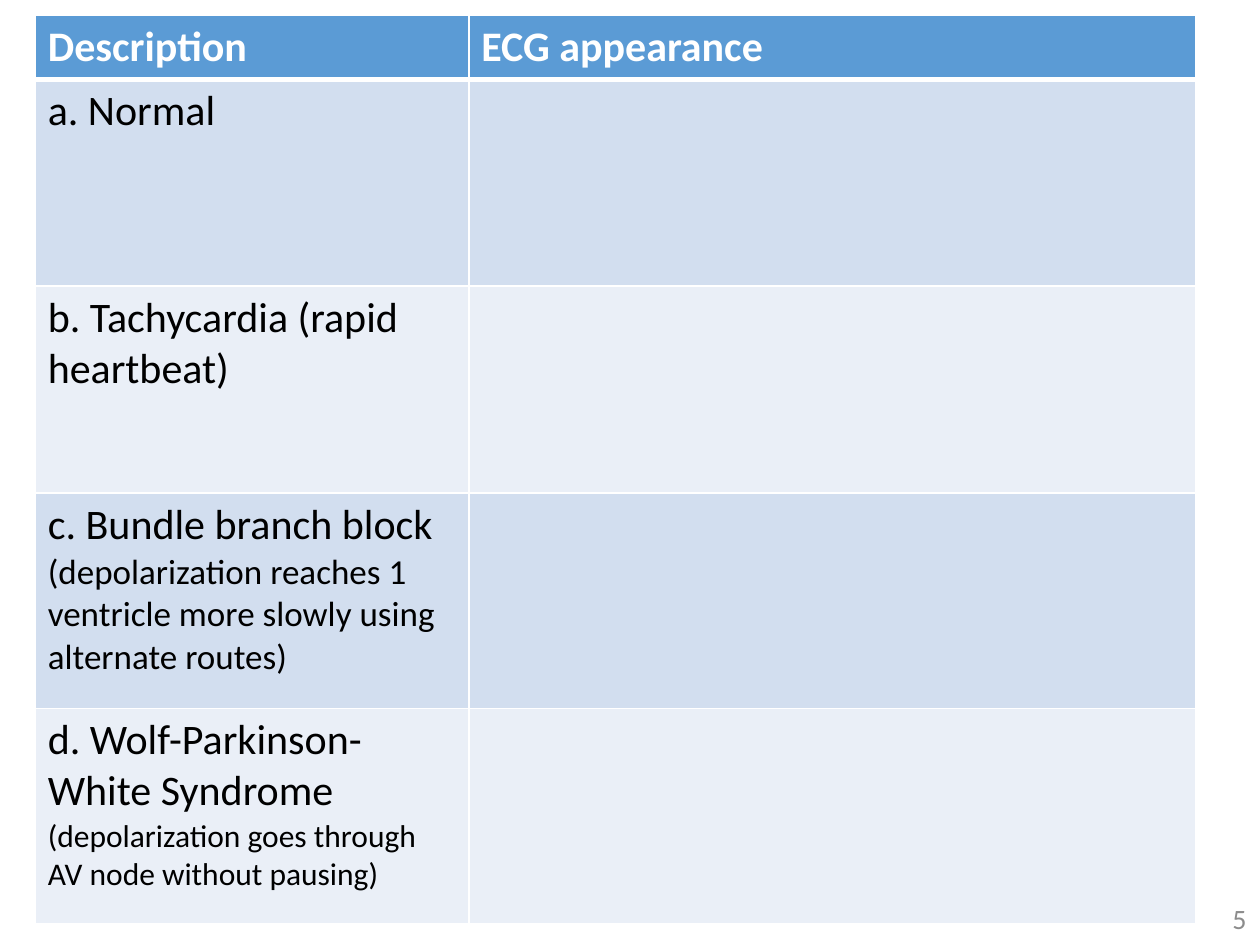
from dataclasses import dataclass

from lxml import etree
from pptx import Presentation
from pptx import util as u
from pptx.dml.color import RGBColor
from pptx.enum import text
from pptx.oxml import ns

FONT = "Calibri"
HUES = {
    "head": "5B9BD5",
    "odd": "D2DEEF",
    "even": "EAEFF7",
    "rule": "FFFFFF",
    "ink": "000000",
    "page": "8C8C8C",
}


@dataclass
class Run:
    words: str
    size: int = 24
    hue: str = "ink"
    bold: bool = False


@dataclass
class Row:
    high: float
    fill: str
    cells: list[list[Run]]
    base: float = 1


def color(name: str) -> RGBColor:
    return RGBColor.from_string(HUES[name])


def write(para, runs: list[Run]) -> None:
    for item in runs:
        run = para.add_run()
        run.text = item.words
        form = {"name": FONT, "size": u.Pt(item.size), "bold": item.bold}
        for key, val in form.items():
            setattr(run.font, key, val)
        run.font.color.rgb = color(item.hue)


def edge(cell, side: str, width: float) -> None:
    """Add one border line; borders must come before the cell fill."""
    line = etree.SubElement(
        cell._tc.get_or_add_tcPr(), ns.qn(f"a:ln{side}"), w=str(u.Pt(width))
    )
    fill = etree.SubElement(line, ns.qn("a:solidFill"))
    etree.SubElement(fill, ns.qn("a:srgbClr"), val=HUES["rule"])


def draw(slide, rows: list[Row], cols: list[float]) -> None:
    frame = slide.shapes.add_table(
        len(rows), len(cols), u.Cm(0.71), u.Cm(0.3),
        u.Cm(sum(cols)), u.Cm(sum(row.high for row in rows)),
    )
    table = frame.table
    for col, wide in zip(table.columns, cols):
        col.width = u.Cm(wide)
    tops = [1] + [row.base for row in rows]
    for line, row, top in zip(table.rows, rows, tops):
        line.height = u.Cm(row.high)
        for cell, runs in zip(line.cells, row.cells):
            for side, width in zip("LRTB", (1, 1, top, row.base)):
                edge(cell, side, width)
            cell.fill.solid()
            cell.fill.fore_color.rgb = color(row.fill)
            write(cell.text_frame.paragraphs[0], runs)


def number(slide, page: str) -> None:
    box = slide.shapes.add_textbox(u.Cm(19.66), u.Cm(18.01), u.Cm(5.72), u.Cm(1.02))
    form = {"word_wrap": True, "vertical_anchor": text.MSO_ANCHOR.MIDDLE}
    for key, val in form.items():
        setattr(box.text_frame, key, val)
    para = box.text_frame.paragraphs[0]
    para.alignment = text.PP_ALIGN.RIGHT
    write(para, [Run(page, 16, "page")])


# Table content: header, then one row per heart rhythm
HEAD = [[Run(words, 24, "rule", True)] for words in ("Description", "ECG appearance")]
ROWS = [
    Row(1.3, "head", HEAD, 3),
    Row(4.17, "odd", [[Run("a. Normal")], []]),
    Row(4.17, "even", [[Run("b. Tachycardia (rapid heartbeat)")], []]),
    Row(4.34, "odd", [[
        Run("c. Bundle branch block "),
        Run("(depolarization reaches 1 ventricle more slowly using alternate routes)", 20),
    ], []]),
    Row(4.34, "even", [[
        Run("d. Wolf-Parkinson-White Syndrome "),
        Run("(depolarization goes through AV node without pausing)", 18),
    ], []]),
]


def main() -> None:
    deck = Presentation()
    deck.slide_width, deck.slide_height = u.Cm(25.4), u.Cm(19.05)
    slide = deck.slides.add_slide(deck.slide_layouts[6])
    number(slide, "5")
    draw(slide, ROWS, [8.74, 14.66])
    deck.save("out.pptx")


if __name__ == "__main__":
    main()
